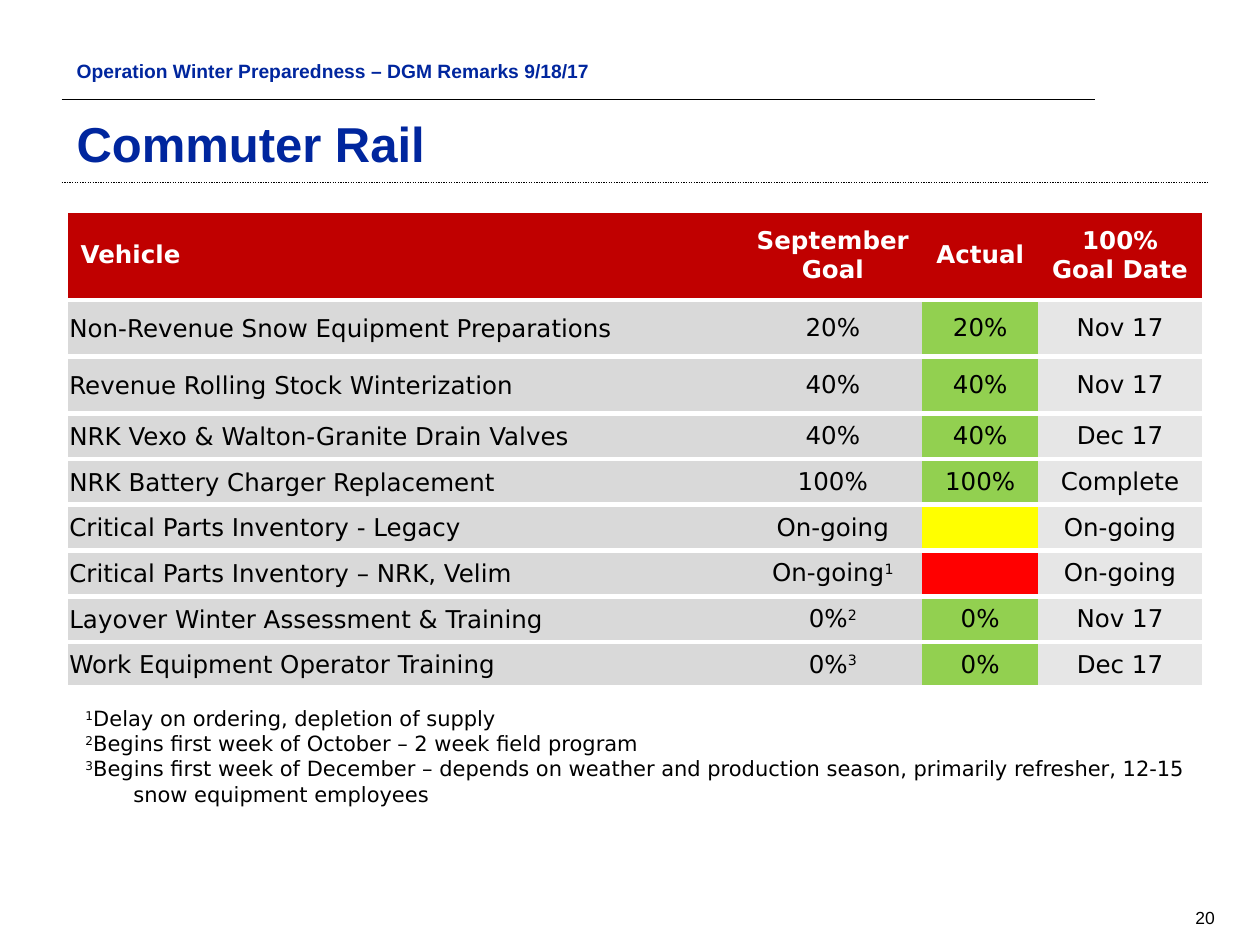
"""Build the commuter rail winter preparedness slide."""
from dataclasses import dataclass

from lxml.etree import SubElement
from pptx import Presentation
from pptx.dml.color import RGBColor as Rgb
from pptx.enum.dml import MSO_LINE as Dash
from pptx.enum.shapes import MSO_CONNECTOR as Connector
from pptx.enum.text import MSO_ANCHOR as Anchor, PP_ALIGN as Align
from pptx.oxml import parse_xml
from pptx.oxml.ns import nsdecls, qn
from pptx.util import Inches, Pt


@dataclass(frozen=True)
class Style:
    size: float
    color: str
    face: str = "DejaVu Sans"
    bold: bool = False


@dataclass(frozen=True)
class Theme:
    title: Style = Style(28, "00269E", "Arial", True)
    header: Style = Style(11, "00269E", "Arial", True)
    number: Style = Style(10, "000000", "Arial")
    head: Style = Style(14, "FFFFFF", bold=True)
    body: Style = Style(14, "000000")
    note: Style = Style(12, "000000")
    rule: str = "000000"
    head_fill: str = "C00000"
    task_fill: str = "D9D9D9"
    date_fill: str = "E6E6E6"
    on_track: str = "92D050"
    caution: str = "FFFF00"
    late: str = "FF0000"


@dataclass(frozen=True)
class Task:
    name: str
    goal: str
    actual: str
    date: str
    status: str


@dataclass(frozen=True)
class Label:
    lines: tuple
    area: tuple
    style: Style
    anchor: Anchor = Anchor.TOP
    align: Align = Align.LEFT
    hang: float = 0


@dataclass(frozen=True)
class Rule:
    right: float
    top: float
    width: float
    dash: Dash


THEME = Theme()
HEADINGS = ("Vehicle", "September Goal", "Actual", "100% Goal Date")
COLUMNS = (5.36, 1.42, 0.92, 1.3)
ROWS = (0.71, 0.45, 0.45) + (2.18 / 6,) * 6
TASKS = (
    Task("Non-Revenue Snow Equipment Preparations", "20%", "20%", "Nov 17", THEME.on_track),
    Task("Revenue Rolling Stock Winterization", "40%", "40%", "Nov 17", THEME.on_track),
    Task("NRK Vexo & Walton-Granite Drain Valves", "40%", "40%", "Dec 17", THEME.on_track),
    Task("NRK Battery Charger Replacement", "100%", "100%", "Complete", THEME.on_track),
    Task("Critical Parts Inventory - Legacy", "On-going", "", "On-going", THEME.caution),
    Task("Critical Parts Inventory – NRK, Velim", "On-going^1", "", "On-going", THEME.late),
    Task("Layover Winter Assessment & Training", "0%^2", "0%", "Nov 17", THEME.on_track),
    Task("Work Equipment Operator Training", "0%^3", "0%", "Dec 17", THEME.on_track),
)
NOTES = (
    "^1^Delay on ordering, depletion of supply",
    "^2^Begins first week of October – 2 week field program",
    "^3^Begins first week of December – depends on weather and production season, "
    "primarily refresher, 12-15 snow equipment employees",
)
LABELS = (
    Label(("Operation Winter Preparedness – DGM Remarks 9/18/17",),
          (0.51, 0.42, 7.99, 0.25), THEME.header),
    Label(("Commuter Rail",), (0.51, 0.91, 8.48, 0.51), THEME.title, Anchor.BOTTOM),
    Label(NOTES, (0.58, 5.55, 8.95, 0.91), THEME.note, hang=0.38),
    Label(("20",), (8.91, 7.16, 0.83, 0.25), THEME.number, Anchor.MIDDLE, Align.RIGHT),
)
RULES = (Rule(8.69, 0.79, 1, Dash.SOLID), Rule(9.59, 1.45, 0.75, Dash.ROUND_DOT))


def write(para, text: str, style: Style, align: Align) -> None:
    """Fill a paragraph, raising every second part between carets."""
    para.alignment = align
    for index, part in enumerate(text.split("^")):
        if not part:
            continue
        span = para.add_run()
        span.text = part
        font = span.font
        font.size, font.name, font.bold = Pt(style.size), style.face, style.bold
        font.color.rgb = Rgb.from_string(style.color)
        if index % 2:
            span._r.get_or_add_rPr().set("baseline", "30000")
    if not text:
        SubElement(para._p, qn("a:endParaRPr")).set("sz", str(int(style.size * 100)))


def add_label(page, label: Label) -> None:
    """Place a wrapped text box."""
    box = page.shapes.add_textbox(*map(Inches, label.area))
    frame = box.text_frame
    frame.word_wrap, frame.vertical_anchor = True, label.anchor
    for index, line in enumerate(label.lines):
        para = frame.add_paragraph() if index else frame.paragraphs[0]
        if label.hang:
            properties = para._p.get_or_add_pPr()
            properties.set("marL", str(Inches(label.hang)))
            properties.set("indent", str(-Inches(label.hang)))
        write(para, line, label.style, label.align)


def add_rule(page, rule: Rule) -> None:
    """Draw a horizontal rule from the left margin."""
    top = Inches(rule.top)
    line = page.shapes.add_connector(
        Connector.STRAIGHT, Inches(0.49), top, Inches(rule.right), top)
    line.line.color.rgb = Rgb.from_string(THEME.rule)
    line.line.width, line.line.dash_style = Pt(rule.width), rule.dash
    SubElement(line._element.spPr, qn("a:effectLst"))


def style_cell(cell, text: str, style: Style, fill: str, column: int, is_head: bool) -> None:
    """Write a cell and give it fill, margins and white row gaps."""
    is_name = column == 0 and not is_head
    side, top, bottom = (0.01, 0.01, 0) if is_name else (0.1, 0.03, 0.03)
    cell.margin_left = cell.margin_right = Inches(side)
    cell.margin_top, cell.margin_bottom = Inches(top), Inches(bottom)
    cell.vertical_anchor = Anchor.MIDDLE
    cell.fill.solid()
    cell.fill.fore_color.rgb = Rgb.from_string(fill)
    properties = cell._tc.get_or_add_tcPr()
    white = '<a:solidFill><a:srgbClr val="FFFFFF"/></a:solidFill>'
    borders = (("lnL", "<a:noFill/>"), ("lnR", "<a:noFill/>"), ("lnT", white), ("lnB", white))
    for index, (edge, paint) in enumerate(borders):
        border = f'<a:{edge} {nsdecls("a")} w="{Pt(3)}">{paint}</a:{edge}>'
        properties.insert(index, parse_xml(border))
    align = Align.CENTER if column else Align.LEFT
    write(cell.text_frame.paragraphs[0], text, style, align)


def add_task_table(page) -> None:
    """Draw the table of goals and progress."""
    area = map(Inches, (0.54, 1.67, sum(COLUMNS), sum(ROWS)))
    table = page.shapes.add_table(len(ROWS), len(COLUMNS), *area).table
    table.first_row = table.horz_banding = False
    for column, width in zip(table.columns, COLUMNS):
        column.width = Inches(width)
    for row, height in zip(table.rows, ROWS):
        row.height = Inches(height)
    for column, heading in enumerate(HEADINGS):
        style_cell(table.cell(0, column), heading, THEME.head, THEME.head_fill, column, True)
    for row, task in enumerate(TASKS, start=1):
        texts = (task.name, task.goal, task.actual, task.date)
        fills = (THEME.task_fill, THEME.task_fill, task.status, THEME.date_fill)
        for column, (text, fill) in enumerate(zip(texts, fills)):
            style_cell(table.cell(row, column), text, THEME.body, fill, column, False)


def main() -> None:
    """Build and save the deck."""
    deck = Presentation()
    deck.slide_width, deck.slide_height = Inches(10), Inches(7.5)
    page = deck.slides.add_slide(deck.slide_layouts[6])
    for rule in RULES:
        add_rule(page, rule)
    for label in LABELS:
        add_label(page, label)
    add_task_table(page)
    deck.save("out.pptx")


if __name__ == "__main__":
    main()
